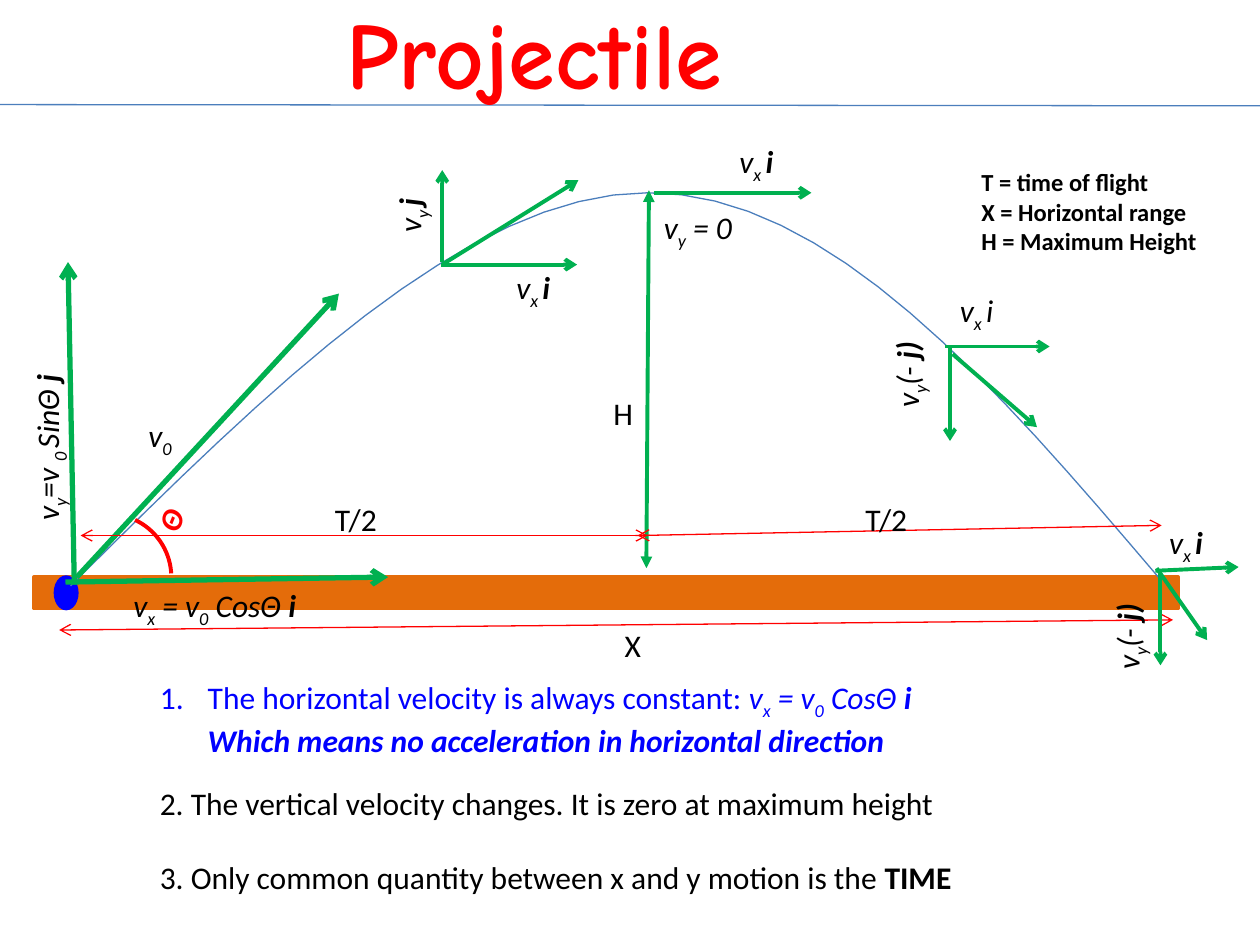
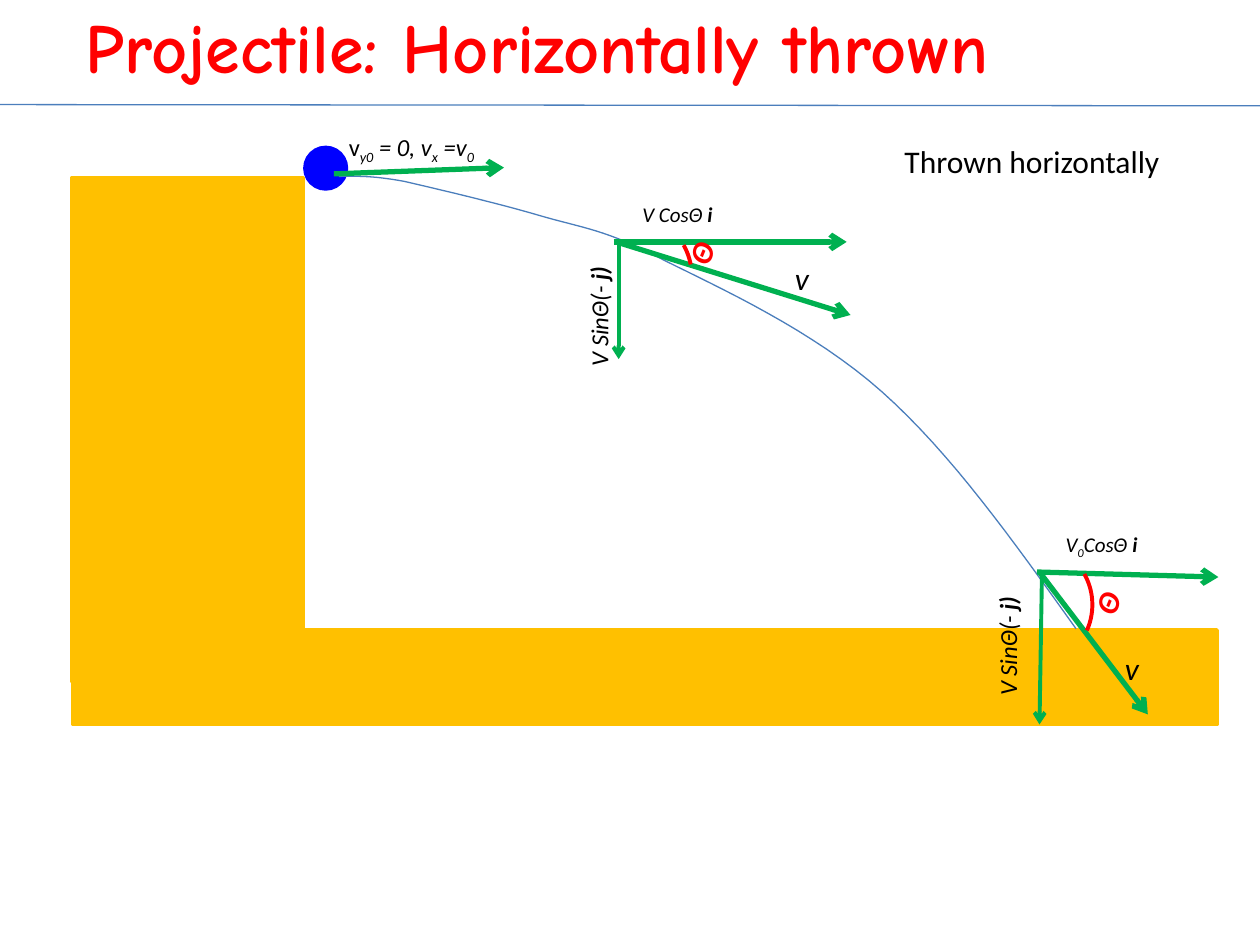
from dataclasses import dataclass

from lxml import etree
from pptx import Presentation
from pptx.dml.color import RGBColor
from pptx.enum.shapes import MSO_CONNECTOR, MSO_SHAPE
from pptx.enum.text import MSO_AUTO_SIZE
from pptx.oxml.ns import qn
from pptx.util import Cm, Pt

STRAIGHT = MSO_CONNECTOR.STRAIGHT
RECTANGLE = MSO_SHAPE.RECTANGLE
OVAL = MSO_SHAPE.OVAL
ARC = MSO_SHAPE.ARC
GROW = MSO_AUTO_SIZE.SHAPE_TO_FIT_TEXT


@dataclass(frozen=True)
class Theme:
    body_font: str = "Calibri"
    title_font: str = "Comic Neue"
    black: str = "000000"
    red: str = "FF0000"
    green: str = "00B050"
    blue: str = "0000FF"
    curve: str = "4B7EBC"
    soil: str = "E46C0A"
    cliff: str = "FFC000"
    body: int = 18
    small: int = 14
    tiny: int = 12
    thin: float = 0.75
    outline: float = 2
    medium: float = 2.25
    thick: float = 3


THEME = Theme()
UNIT_CM = 2.54
CURVE_STEPS = 16
ARC_SIZE = 1
ARC_TURN = 25.2
THETA_TURN = 112.2
UP = 270
LINE_HEIGHT = {THEME.body: 0.4, THEME.small: 0.34, THEME.tiny: 0.3}

LINE_STYLES = {
    "rule": (THEME.curve, THEME.thin, None, None),
    "velocity": (THEME.green, THEME.thick, None, "arrow"),
    "component": (THEME.green, THEME.medium, None, "arrow"),
    "height": (THEME.green, THEME.medium, "triangle", "triangle"),
    "span": (THEME.red, THEME.thin, "arrow", "arrow"),
}


@dataclass(frozen=True)
class Label:
    left: float
    top: float
    width: float
    paragraphs: list
    size: int = THEME.body
    color: str = THEME.black
    font: str = THEME.body_font
    height: float = 0
    rotation: float = 0
    wrap: bool = False
    number_indent: float = 0


# Run styles: b = bold, i = italic, s = subscript
VX = [("v", "i"), ("x ", "is")]
VX_I = [VX + [("i", "bi")]]
VY_J = [[("v", "i"), ("y ", "is"), ("j", "bi")]]
VY_DOWN = [[("v", "i"), ("y", "is"), ("(- ", "i"), ("j)", "bi")]]
VX_LAUNCH = [("v", "i"), ("x", "is"), (" = v", "i"), ("0", "is"), (" CosΘ ", "i")]
V = [[("v", "i")]]
V_SIN = [[("V SinΘ(- ", "i"), ("j)", "bi")]]
HALF_TIME = [[("T/2", "")]]

LAUNCHED = {
    "title": Label(2.65, -0.09, 3.69, [[("Projectile", "b")]], 54, THEME.red,
                   THEME.title_font, 1.01),
    "shapes": [
        (RECTANGLE, (0.27, 4.58, 9.08, 0.25), THEME.soil),
        (OVAL, (0.44, 4.58, 0.17, 0.25), THEME.blue),
    ],
    "trajectory": [(0.56, 4.65),
                   (2.13, 3.09), (3.7, 1.53), (5.14, 1.53),
                   (6.58, 1.52), (7.9, 3.06), (9.21, 4.6)],
    "lines": {
        "height": [(5.15, 1.51, 5.13, 4.51)],
        "velocity": [(0.61, 4.58, 2.69, 2.33), (0.52, 4.62, 3.08, 4.58),
                     (0.59, 4.64, 0.54, 2.08)],
        "span": [(0.47, 5, 9.31, 4.92), (0.64, 4.25, 5.14, 4.25),
                 (5.06, 4.25, 9.22, 4.17)],
        "component": [
            (3.51, 2.1, 4.59, 1.43), (3.5, 2.1, 4.58, 2.1), (3.51, 2.08, 3.51, 1.35),
            (5.19, 1.53, 6.44, 1.53),
            (7.56, 2.81, 8.23, 3.39), (7.5, 2.75, 8.33, 2.75), (7.54, 2.76, 7.54, 3.5),
            (9.18, 4.51, 9.58, 5.08), (9.17, 4.53, 9.83, 4.5), (9.21, 4.54, 9.21, 5.28),
        ],
    },
    "angles": [((0.36, 4.08), (162, 198.92), (1, 4.07, 0.66))],
    "labels": [
        Label(4.77, 3.08, 0.36, [[("H", "")]]),
        Label(1.08, 3.25, 0.4, [[("v", "i"), ("0", "is")]]),
        Label(-0.33, 3.33, 1.4, [[("v", "i"), ("y", "is"), ("=v ", "i"), ("0 ", "is"),
                                  ("SinΘ ", "i"), ("j", "bi")]], rotation=UP),
        Label(0.96, 4.6, 1.53, [VX_LAUNCH + [("i", "bi")]]),
        Label(7.69, 1.28, 1.92, [[("T = time of flight", "b")],
                                 [("X = Horizontal range", "b")],
                                 [("H = Maximum Height", "b")]],
              THEME.small, height=0.81),
        Label(4.86, 4.92, 0.33, [[("X", "")]]),
        Label(2.56, 3.92, 0.54, HALF_TIME),
        Label(6.77, 3.92, 0.54, HALF_TIME),
        Label(5.17, 1.6, 0.92, [[("v", "i"), ("y", "is"), (" = 0", "i")]], wrap=True),
        Label(5.77, 1.08, 0.48, VX_I),
        Label(4, 2.08, 0.48, VX_I),
        Label(3, 1.5, 0.49, VY_J, rotation=UP),
        Label(7.52, 2.26, 0.48, [VX + [("i", "i")]]),
        Label(6.83, 2.75, 0.75, VY_DOWN, height=0.42, rotation=UP, wrap=True),
        Label(9.18, 4.1, 0.48, VX_I),
        Label(8.58, 4.83, 0.75, VY_DOWN, height=0.42, rotation=UP, wrap=True),
        Label(1.17, 5.33, 6.58,
              [[("The horizontal velocity is always constant: ", "")] + VX_LAUNCH
               + [("i Which means no acceleration in horizontal direction", "bi")]],
              color=THEME.blue, height=0.71, wrap=True, number_indent=0.38),
        Label(1.17, 6.17, 7,
              [[("2. The vertical velocity changes. It is zero at maximum height", "")]],
              wrap=True),
        Label(1.17, 6.76, 7,
              [[("3. Only common quantity between x and y motion is the ", ""),
                ("TIME", "b")]], wrap=True),
    ],
}

THROWN = {
    "title": Label(0.58, -0.02, 8.59, [[("Projectile: Horizontally thrown", "b")]], 40,
                   THEME.red, THEME.title_font, 0.77),
    "shapes": [
        (RECTANGLE, (0.58, 5, 9.08, 0.75), THEME.cliff),
        (RECTANGLE, (0.57, 1.41, 1.84, 4), THEME.cliff),
        (OVAL, (2.42, 1.17, 0.33, 0.33), THEME.blue),
    ],
    "trajectory": [(2.69, 1.4),
                   (2.82, 1.4), (2.94, 1.39), (3.21, 1.44),
                   (3.47, 1.5), (3.94, 1.61), (4.28, 1.71),
                   (4.62, 1.81), (4.81, 1.82), (5.26, 2.06),
                   (5.72, 2.29), (6.45, 2.62), (7, 3.11),
                   (7.55, 3.6), (8.04, 4.29), (8.54, 4.99)],
    "lines": {
        "velocity": [(2.65, 1.38, 4, 1.33),
                     (4.89, 1.92, 6.75, 2.5), (4.87, 1.92, 6.72, 1.92),
                     (8.25, 4.54, 9.11, 5.67), (8.23, 4.54, 9.67, 4.58)],
        "component": [(4.91, 1.93, 4.91, 2.85), (8.27, 4.54, 8.25, 5.75)],
    },
    "angles": [
        ((4.49, 1.69), (183.36, 194.6), (5.21, 1.95, 0.66)),
        ((7.67, 4.3), (183.36, 215.34), (8.67, 4.57, 0.32)),
    ],
    "labels": [
        Label(6.21, 2.01, 0.31, V),
        Label(4.26, 2.34, 0.99, V_SIN, THEME.small, rotation=UP),
        Label(5, 1.55, 0.76, [[("V CosΘ ", "i"), ("i", "bi")]], THEME.tiny),
        Label(2.67, 1, 1.23, [[("v", ""), ("y0", "is"), (" = 0, v", "i"), ("x", "is"),
                               (" =v", "i"), ("0", "is")]], THEME.small),
        Label(8.83, 5.1, 0.31, V),
        Label(7.5, 4.95, 1, V_SIN, THEME.small, rotation=UP),
        Label(8.36, 4.17, 0.78, [[("V", "i"), ("0", "is"), ("CosΘ ", "i"),
                                  ("i", "bi")]], THEME.tiny),
        Label(7.08, 1.08, 2.25, [[("Thrown horizontally", "")]]),
    ],
}


def lengths(*values):
    return [Cm(value * UNIT_CM) for value in values]


def set_line(line, color, width):
    line.color.rgb = RGBColor.from_string(color)
    line.width = Pt(width)


def add_line(slide, ends, style):
    color, width, head, tail = LINE_STYLES[style]
    connector = slide.shapes.add_connector(STRAIGHT, *lengths(*ends))
    set_line(connector.line, color, width)
    line = connector.line._get_or_add_ln()
    for tag, arrowhead in (("a:headEnd", head), ("a:tailEnd", tail)):
        if arrowhead:
            etree.SubElement(line, qn(tag), type=arrowhead)
    etree.SubElement(connector._element.spPr, qn("a:effectLst"))


def add_solid(slide, kind, box, color):
    shape = slide.shapes.add_shape(kind, *lengths(*box))
    shape.shadow.inherit = False
    shape.fill.solid()
    shape.fill.fore_color.rgb = RGBColor.from_string(color)
    set_line(shape.line, color, THEME.outline)


def curve_points(points):
    for index in range(0, len(points) - 1, 3):
        start, first, second, end = points[index:index + 4]
        for step in range(1, CURVE_STEPS + 1):
            t = step / CURVE_STEPS
            weights = ((1 - t) ** 3, 3 * t * (1 - t) ** 2, 3 * t ** 2 * (1 - t), t ** 3)
            yield lengths(*(sum(weight * value for weight, value in zip(weights, axis))
                            for axis in zip(start, first, second, end)))


def add_trajectory(slide, points):
    builder = slide.shapes.build_freeform(*lengths(*points[0]))
    builder.add_line_segments(list(curve_points(points)), close=False)
    shape = builder.convert_to_shape()
    shape.shadow.inherit = False
    shape.fill.background()
    set_line(shape.line, THEME.curve, THEME.thin)


def add_label(slide, label):
    height = label.height or LINE_HEIGHT[label.size]
    box = slide.shapes.add_textbox(*lengths(label.left, label.top, label.width, height))
    box.rotation = label.rotation
    text_frame = box.text_frame
    text_frame.word_wrap = label.wrap
    text_frame.auto_size = GROW
    for index, runs in enumerate(label.paragraphs):
        paragraph = text_frame.add_paragraph() if index else text_frame.paragraphs[0]
        if label.number_indent:
            indent = lengths(label.number_indent)[0]
            properties = paragraph._p.get_or_add_pPr()
            properties.set("marL", str(indent))
            properties.set("indent", str(-indent))
            etree.SubElement(properties, qn("a:buAutoNum"), type="arabicPeriod")
        for text, style in runs:
            run = paragraph.add_run()
            run.text = text
            run.font.name = label.font
            run.font.size = Pt(label.size)
            run.font.color.rgb = RGBColor.from_string(label.color)
            run.font.bold = "b" in style
            run.font.italic = "i" in style
            if "s" in style:
                run._r.get_or_add_rPr().set("baseline", "-25000")


def add_angle(slide, corner, sweep, theta):
    arc = slide.shapes.add_shape(ARC, *lengths(*corner, ARC_SIZE, ARC_SIZE))
    arc.shadow.inherit = False
    arc.rotation = ARC_TURN
    arc.adjustments[0], arc.adjustments[1] = sweep
    arc.fill.background()
    set_line(arc.line, THEME.red, THEME.medium)
    add_label(slide, Label(*theta, [[("Θ", "bi")]], color=THEME.red,
                           rotation=THETA_TURN, wrap=True))


def add_scene(presentation, scene):
    slide = presentation.slides.add_slide(presentation.slide_layouts[6])
    add_line(slide, (0, 0.83, 10, 0.84), "rule")
    add_label(slide, scene["title"])
    for kind, box, color in scene["shapes"]:
        add_solid(slide, kind, box, color)
    add_trajectory(slide, scene["trajectory"])
    for style, segments in scene["lines"].items():
        for ends in segments:
            add_line(slide, ends, style)
    for angle in scene["angles"]:
        add_angle(slide, *angle)
    for label in scene["labels"]:
        add_label(slide, label)


def main():
    presentation = Presentation()
    presentation.slide_width, presentation.slide_height = lengths(10, 7.5)
    for scene in (LAUNCHED, THROWN):
        add_scene(presentation, scene)
    presentation.save("out.pptx")


if __name__ == "__main__":
    main()
